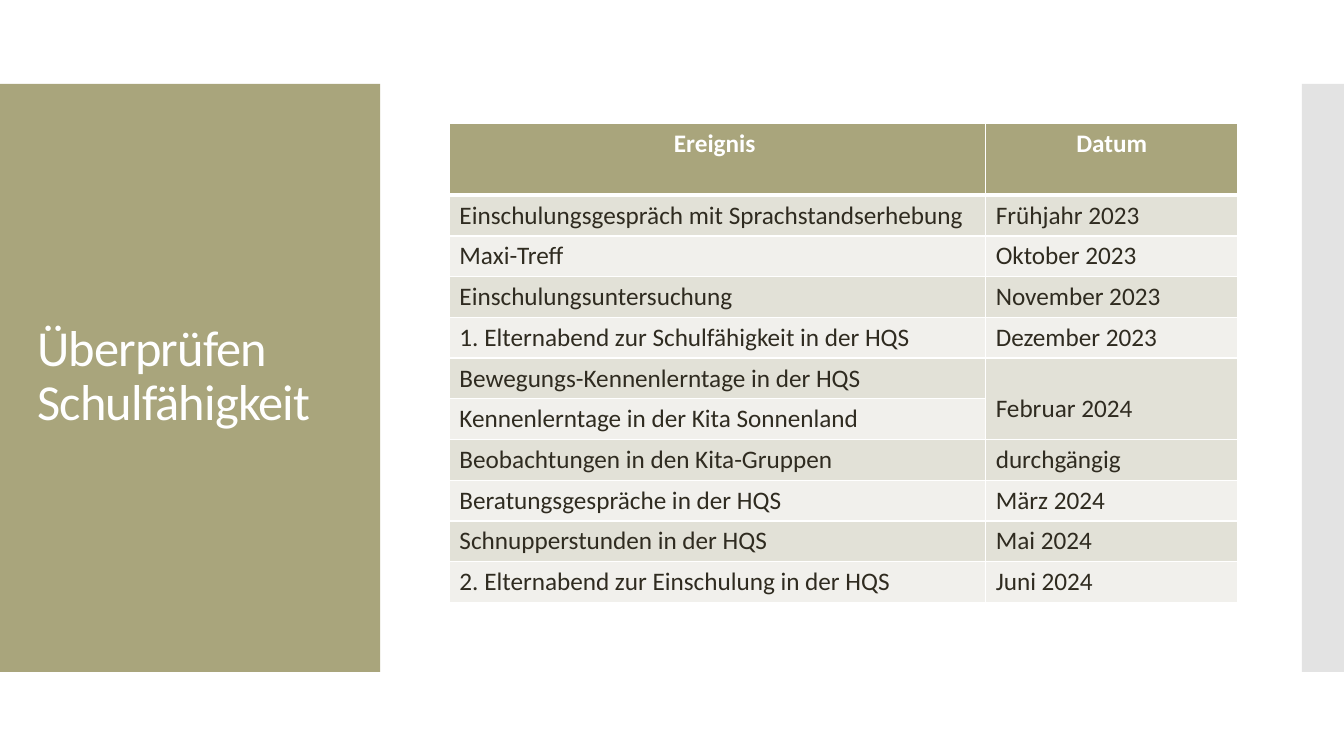
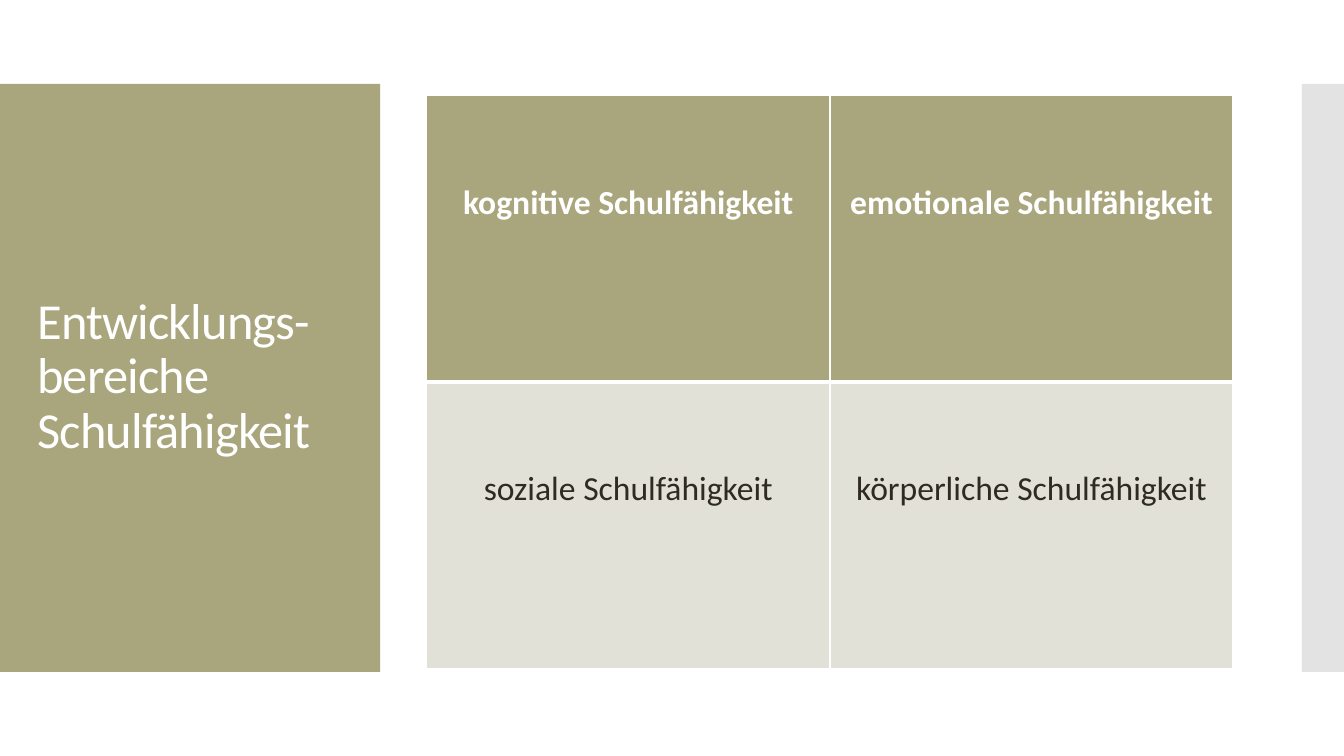
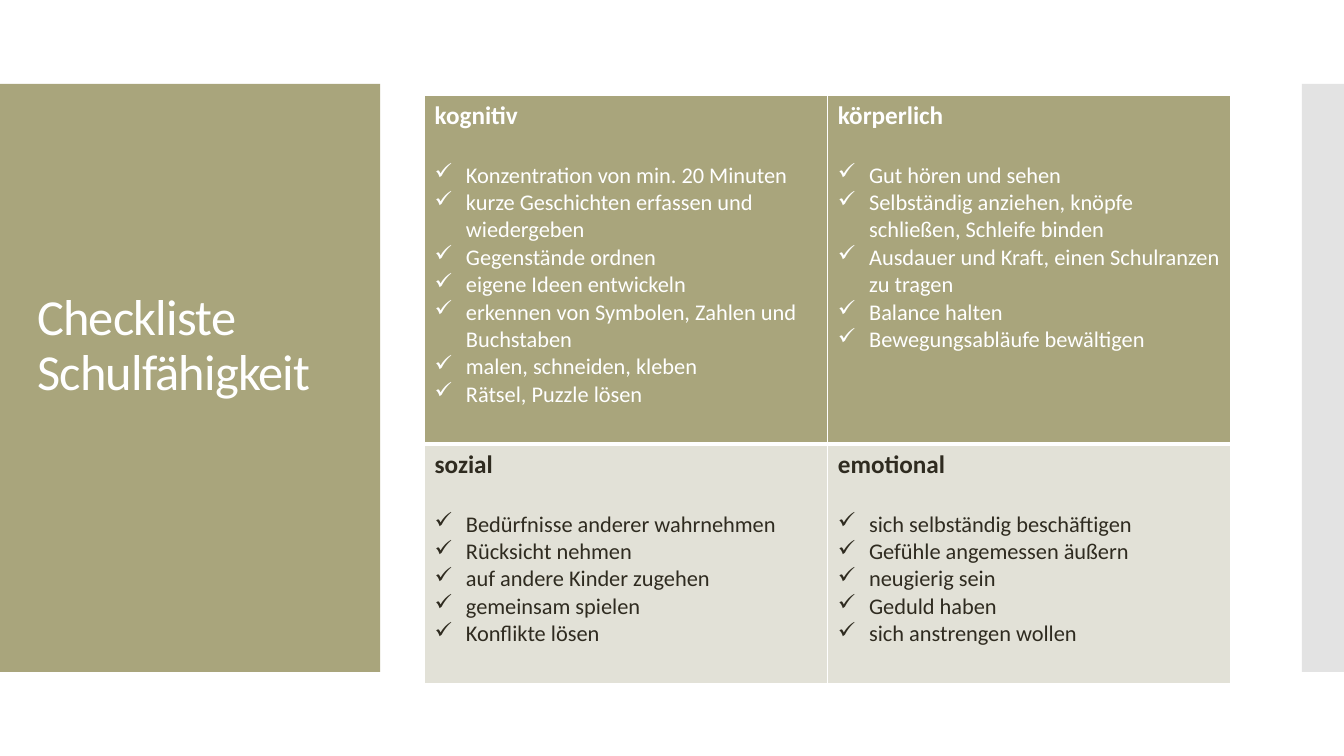
from pptx import Presentation
from pptx.dml.color import RGBColor
from pptx.enum.shapes import MSO_SHAPE
from pptx.enum.text import MSO_ANCHOR, PP_ALIGN
from pptx.oxml.ns import qn
from pptx.util import Inches, Pt
from lxml import etree

RECTANGLE = MSO_SHAPE.RECTANGLE
MIDDLE = MSO_ANCHOR.MIDDLE
CENTER, LEFT = PP_ALIGN.CENTER, PP_ALIGN.LEFT

SLIDE_WIDTH, SLIDE_HEIGHT = Inches(13.33), Inches(7.5)
GRID_COLUMNS = 32
LINE_HEIGHT = 1.22  # line pitch of the font as a share of its size


def grid(units):
    """Length of a number of grid columns; rows are equally high (32 x 18)."""
    return round(SLIDE_WIDTH * units / GRID_COLUMNS)


def color(hex_code):
    return RGBColor.from_string(hex_code)


class Deck:
    FONT = "Calibri"
    OLIVE, GRAY, WHITE, INK = "A9A57C", "C8C8C8", "FFFFFF", "2F2B20"
    BANDS = ("F1F0EC", "E2E1D7")

    def __init__(self):
        self.presentation = Presentation()
        self.presentation.slide_width = SLIDE_WIDTH
        self.presentation.slide_height = SLIDE_HEIGHT
        self.slide = None

    def add_slide(self, title, raised_lines=0):
        layout = self.presentation.slide_layouts[6]
        self.slide = self.presentation.slides.add_slide(layout)
        self.band(0, 9.05, self.OLIVE)
        self.band(31, 1, self.GRAY, opacity=50)
        self.title(title, raised_lines)

    def band(self, left, width, fill, opacity=100):
        shape = self.slide.shapes.add_shape(
            RECTANGLE, grid(left), grid(2), grid(width), grid(14))
        shape.shadow.inherit = False
        shape.line.fill.background()
        shape.fill.solid()
        shape.fill.fore_color.rgb = color(fill)
        if opacity < 100:
            fill_color = shape._element.spPr.find(qn("a:solidFill"))[0]
            etree.SubElement(fill_color, qn("a:alpha"), val=str(opacity * 1000))

    def title(self, text, raised_lines):
        """Title in the left band, lifted by half of raised_lines."""
        size = 36
        box = self.slide.shapes.add_textbox(
            grid(0.65), grid(2.95), grid(7.73), grid(12.07))
        frame = box.text_frame
        frame.word_wrap = True
        frame.vertical_anchor = MIDDLE
        frame.margin_bottom = Inches(0.05) + Pt(raised_lines * size * LINE_HEIGHT)
        frame.text = text
        paragraph = frame.paragraphs[0]
        paragraph.line_spacing = 0.9
        self.format_runs(paragraph, size, self.WHITE)
        for run in paragraph.runs:
            run.font._element.set("spc", "-60")

    def format_runs(self, paragraph, size, text_color, bold=False):
        for run in paragraph.runs:
            run.font.name = self.FONT
            run.font.size = Pt(size)
            run.font.bold = bold
            run.font.color.rgb = color(text_color)

    def table(self, left, top, widths, heights, rows, size=18,
              centered_rows=0, skipped_lines=0):
        """Table with a header row; a cell is a text, a checklist or None."""
        table = self.slide.shapes.add_table(
            len(heights), len(widths), grid(left), grid(top),
            grid(sum(widths)), grid(sum(heights))).table
        table.first_row = table.horz_banding = False
        for column, width in zip(table.columns, widths):
            column.width = grid(width)
        for row, height in zip(table.rows, heights):
            row.height = grid(height)
        for row_index, row in enumerate(rows):
            header = row_index == 0
            text_color = self.WHITE if header else self.INK
            for column_index, content in enumerate(row):
                cell = table.cell(row_index, column_index)
                self.borders(cell, row_index)
                cell.fill.solid()
                cell.fill.fore_color.rgb = color(
                    self.OLIVE if header else self.BANDS[row_index % 2])
                self.skip_lines(cell, skipped_lines, size)
                if isinstance(content, tuple):
                    self.checklist(cell, content, text_color)
                elif content:
                    cell.text_frame.text = content
                    paragraph = cell.text_frame.paragraphs[0]
                    paragraph.alignment = CENTER if row_index < centered_rows else LEFT
                    self.format_runs(paragraph, size, text_color, bold=header)
        return table

    def skip_lines(self, cell, lines, size):
        """Start the text of a cell some lines below its top."""
        cell.margin_top = Inches(0.05) + Pt(lines * size * LINE_HEIGHT)

    def borders(self, cell, row_index):
        """White cell lines, with a thick one below the header."""
        widths = {"lnL": 1, "lnR": 1, "lnT": 3 if row_index == 1 else 1,
                  "lnB": 3 if row_index == 0 else 1}
        properties = cell._tc.get_or_add_tcPr()
        for tag, width in widths.items():
            line = etree.SubElement(properties, qn(f"a:{tag}"), w=str(Pt(width)))
            fill = etree.SubElement(line, qn("a:solidFill"))
            etree.SubElement(fill, qn("a:srgbClr"), val=self.WHITE)

    def checklist(self, cell, lines, text_color):
        """Bold heading, one line of space, then ticked items."""
        cell.text_frame.text = "\n".join(lines)
        heading, *items = cell.text_frame.paragraphs
        self.format_runs(heading, 18, text_color, bold=True)
        heading.space_after = Pt(18 * LINE_HEIGHT)
        indent = Inches(0.31)
        for paragraph in items:
            self.format_runs(paragraph, 16, text_color)
            properties = paragraph._p.get_or_add_pPr()
            properties.set("marL", str(indent))
            properties.set("indent", str(-indent))
            etree.SubElement(properties, qn("a:buChar"), char="✓")


EVENTS = [
    ("Ereignis ", "Datum"),
    ("Einschulungsgespräch mit Sprachstandserhebung", "Frühjahr 2023"),
    ("Maxi-Treff", "Oktober 2023"),
    ("Einschulungsuntersuchung", "November 2023"),
    ("1. Elternabend zur Schulfähigkeit in der HQS", "Dezember 2023"),
    ("Bewegungs-Kennenlerntage in der HQS", "Februar 2024"),
    ("Kennenlerntage in der Kita Sonnenland", None),
    ("Beobachtungen in den Kita-Gruppen", "durchgängig"),
    ("Beratungsgespräche in der HQS", "März 2024"),
    ("Schnupperstunden in der HQS", "Mai 2024"),
    ("2. Elternabend zur Einschulung in der HQS", "Juni 2024"),
]

AREAS = [
    ("kognitive Schulfähigkeit", "emotionale Schulfähigkeit"),
    ("soziale Schulfähigkeit", "körperliche Schulfähigkeit"),
]

CHECKLISTS = [
    (
        ("kognitiv", "Konzentration von min. 20 Minuten",
         "kurze Geschichten erfassen und wiedergeben", "Gegenstände ordnen",
         "eigene Ideen entwickeln",
         "erkennen von Symbolen, Zahlen und Buchstaben",
         "malen, schneiden, kleben", "Rätsel, Puzzle lösen"),
        ("körperlich", "Gut hören und sehen",
         "Selbständig anziehen, knöpfe schließen, Schleife binden",
         "Ausdauer und Kraft, einen Schulranzen zu tragen",
         "Balance halten", "Bewegungsabläufe bewältigen"),
    ),
    (
        ("sozial", "Bedürfnisse anderer wahrnehmen", "Rücksicht nehmen",
         "auf andere Kinder zugehen", "gemeinsam spielen", "Konflikte lösen"),
        ("emotional", "sich selbständig beschäftigen",
         "Gefühle angemessen äußern", "neugierig sein", "Geduld haben",
         "sich anstrengen wollen"),
    ),
]


def main():
    deck = Deck()

    deck.add_slide("Überprüfen Schulfähigkeit")
    heights = [1.7] + [0.97] * (len(EVENTS) - 1)
    events = deck.table(10.7, 2.95, [12.77, 6], heights, EVENTS, centered_rows=1)
    february = events.cell(5, 1)
    february.merge(events.cell(6, 1))
    deck.skip_lines(february, 1, 18)

    deck.add_slide("Entwicklungs-bereiche\vSchulfähigkeit")
    deck.table(10.16, 2.27, [9.6] * 2, [6.83] * 2, AREAS, size=24,
               centered_rows=2, skipped_lines=2)

    deck.add_slide("Checkliste\vSchulfähigkeit", raised_lines=1)
    deck.table(10.11, 2.27, [9.6] * 2, [8.31, 5.7], CHECKLISTS)

    deck.presentation.save("out.pptx")


if __name__ == "__main__":
    main()
